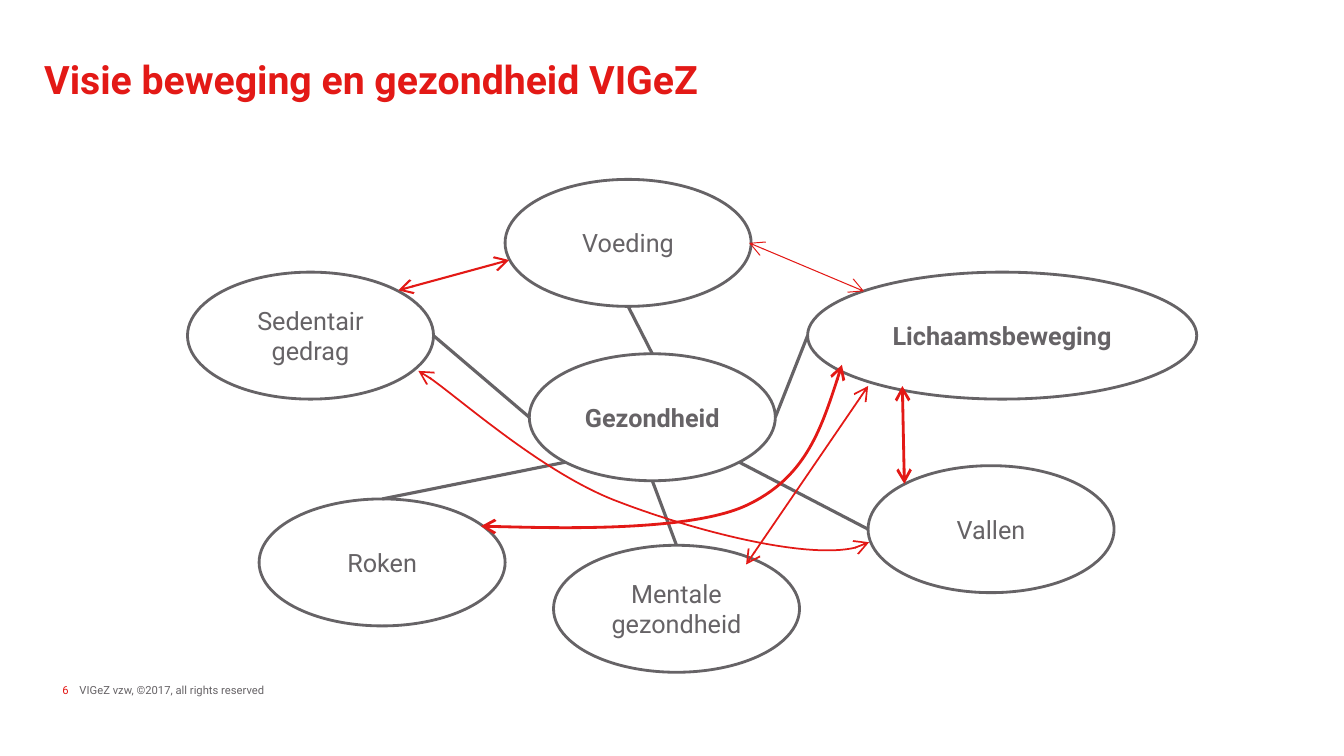
from lxml import etree
from pptx import Presentation
from pptx.dml.color import RGBColor
from pptx.enum.shapes import MSO_CONNECTOR, MSO_SHAPE
from pptx.enum.text import MSO_ANCHOR, PP_ALIGN
from pptx.oxml.ns import qn
from pptx.util import Inches, Pt

COLORS = {"red": "E31916", "grey": "666366"}
FONT = "Roboto"

# text, left, top, width, height, alignment, font, colour
TEXTS = [
    ("VIGeZ vzw, ©2017, all rights reserved", 0.69, 6.73, 6.33, 0.33,
     PP_ALIGN.LEFT, {"size": Pt(8)}, "grey"),
    ("6", 0.11, 6.73, 0.67, 0.33, PP_ALIGN.RIGHT, {"size": Pt(8)}, "red"),
    ("Visie beweging en gezondheid VIGeZ", 0.34, 0.5, 8.5, 1.25,
     PP_ALIGN.LEFT, {"size": Pt(28), "bold": True}, "red"),
]

# left, top, width, bold
OVAL_W, OVAL_H = 2.44, 1.26
THEMES = {
    "Gezondheid": (5.25, 3.51, OVAL_W, True),
    "Vallen": (8.61, 4.62, OVAL_W, False),
    "Sedentair gedrag": (1.86, 2.7, OVAL_W, False),
    "Voeding": (5.01, 1.78, OVAL_W, False),
    "Mentale gezondheid": (5.49, 5.41, OVAL_W, False),
    "Roken": (2.57, 4.95, OVAL_W, False),
    "Lichaamsbeweging": (8.01, 2.7, 3.86, True),
}

# point on Gezondheid, theme, point on that theme
SPOKES = [
    ("left", "Sedentair gedrag", "right"),
    ("bottom left", "Roken", "top"),
    ("bottom", "Mentale gezondheid", "top"),
    ("top", "Voeding", "bottom"),
    ("right", "Lichaamsbeweging", "left"),
    ("bottom right", "Vallen", "left"),
]
DIAGONAL = 0.5 ** 0.5
RIM = {
    "top": (0, -1), "left": (-1, 0), "bottom": (0, 1), "right": (1, 0),
    "bottom left": (-DIAGONAL, DIAGONAL), "bottom right": (DIAGONAL, DIAGONAL),
}

# start, end, line width
ARROWS = [
    ((7.43, 2.41), (8.57, 2.89), 0.75),
    ((3.95, 2.88), (5.05, 2.58), 1.5),
    ((8.95, 3.83), (8.97, 4.8), 2),
    ((8.61, 3.83), (7.4, 5.6), 1.25),
]

# start, then two control points and an end for each bend; line width
CURVES = [
    ([(8.35, 3.62), (8.17, 4.19), (7.98, 4.75), (7.39, 5.02),
      (6.79, 5.29), (4.77, 5.22), (4.77, 5.22)], 2),
    ([(8.62, 5.38), (8.24, 5.62), (6.87, 5.26), (6.14, 4.98),
      (5.41, 4.71), (4.3, 3.73), (4.15, 3.68)], 1.25),
]
UNITS = 100  # freeform units per inch


def rgb(name):
    return RGBColor.from_string(COLORS[name])


def write(tf, text, align, font, color):
    tf.word_wrap = True
    p = tf.paragraphs[0]
    p.alignment = align
    r = p.add_run()
    r.text = text
    for key, value in {"name": FONT, **font}.items():
        setattr(r.font, key, value)
    r.font.color.rgb = rgb(color)


def set_line(sp, color, width, arrows=False):
    sp.line.color.rgb = rgb(color)
    sp.line.width = Pt(width)
    if arrows:
        ln = sp.line._get_or_add_ln()
        for end in ("a:headEnd", "a:tailEnd"):
            etree.SubElement(ln, qn(end), type="arrow", w="lg", len="lg")


def add_line(shapes, start, end, color, width, arrows=False):
    points = [Inches(v) for v in (*start, *end)]
    cxn = shapes.add_connector(MSO_CONNECTOR.STRAIGHT, *points)
    set_line(cxn, color, width, arrows)
    etree.SubElement(cxn._element.spPr, qn("a:effectLst"))


def add_curve(shapes, points, width):
    """Draw the points as straight segments, then merge each three into a Bézier."""
    start, *rest = [(round(x * UNITS), round(y * UNITS)) for x, y in points]
    builder = shapes.build_freeform(*start, scale=Inches(1) / UNITS)
    builder.add_line_segments(rest, close=False)
    sp = builder.convert_to_shape()
    sp.shadow.inherit = False
    sp.fill.background()
    set_line(sp, "red", width, arrows=True)
    segments = list(sp._element.iter(qn("a:lnTo")))
    for i in range(0, len(segments), 3):
        bend = etree.Element(qn("a:cubicBezTo"))
        segments[i].addprevious(bend)
        for segment in segments[i:i + 3]:
            bend.append(segment[0])
            segment.getparent().remove(segment)


def rim_point(theme, side):
    left, top, width, _ = THEMES[theme]
    dx, dy = RIM[side]
    return left + width / 2 * (1 + dx), top + OVAL_H / 2 * (1 + dy)


def add_theme(shapes, name):
    left, top, width, bold = THEMES[name]
    box = [Inches(v) for v in (left, top, width, OVAL_H)]
    sp = shapes.add_shape(MSO_SHAPE.OVAL, *box)
    sp.shadow.inherit = False
    sp.fill.background()
    set_line(sp, "grey", 2)
    sp.text_frame.vertical_anchor = MSO_ANCHOR.MIDDLE
    write(sp.text_frame, name, PP_ALIGN.CENTER, {"size": Pt(18), "bold": bold}, "grey")


def main():
    prs = Presentation()
    prs.slide_width, prs.slide_height = Inches(13.33), Inches(7.5)
    shapes = prs.slides.add_slide(prs.slide_layouts[6]).shapes
    for text, left, top, width, height, align, font, color in TEXTS:
        box = [Inches(v) for v in (left, top, width, height)]
        write(shapes.add_textbox(*box).text_frame, text, align, font, color)
    for name in THEMES:
        add_theme(shapes, name)
    for hub_side, theme, side in SPOKES:
        add_line(shapes, rim_point("Gezondheid", hub_side), rim_point(theme, side),
                 "grey", 2.25)
    for start, end, width in ARROWS:
        add_line(shapes, start, end, "red", width, arrows=True)
    for points, width in CURVES:
        add_curve(shapes, points, width)
    prs.save("out.pptx")


if __name__ == "__main__":
    main()
